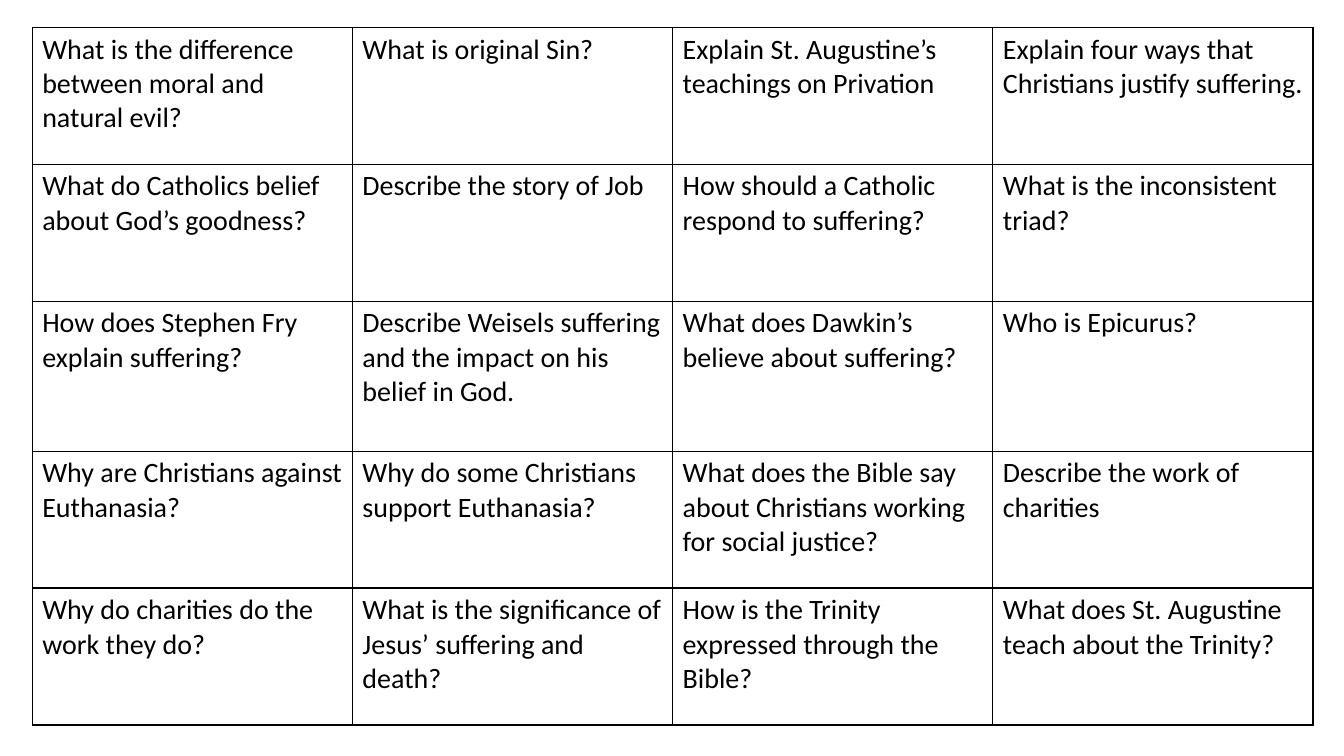
"""Build a slide with a four-by-five grid of revision questions."""
from lxml.etree import SubElement
from pptx import Presentation
from pptx.dml.color import RGBColor
from pptx.oxml.ns import qn
from pptx.util import Pt

COLORS = {"text": "000000", "border": "000000"}
FONT = "Calibri"
COLUMN_WIDTH = 228.75
ROW_HEIGHTS = [97.8, 97.8, 107.2, 97.8, 97.8]
BORDER_WIDTH = 1

QUESTIONS = [
    [
        "What is the difference between moral and natural evil?",
        "What is original Sin?",
        "Explain St. Augustine’s teachings on Privation",
        "Explain four ways that Christians justify suffering.",
    ],
    [
        "What do Catholics belief about God’s goodness?",
        "Describe the story of Job",
        "How should a Catholic respond to suffering?",
        "What is the inconsistent triad?",
    ],
    [
        "How does Stephen Fry explain suffering?",
        "Describe Weisels suffering and the impact on his belief in God.",
        "What does Dawkin’s believe about suffering?",
        "Who is Epicurus?",
    ],
    [
        "Why are Christians against Euthanasia?",
        "Why do some Christians support Euthanasia?",
        "What does the Bible say about Christians working for social justice?",
        "Describe the work of charities",
    ],
    [
        "Why do charities do the work they do?",
        "What is the significance of Jesus’ suffering and death?",
        "How is the Trinity expressed through the Bible?",
        "What does St. Augustine teach about the Trinity?",
    ],
]


def add_borders(cell):
    """Draw a solid line on all four sides of a cell."""
    properties = cell._tc.get_or_add_tcPr()
    for position, side in enumerate(("a:lnL", "a:lnR", "a:lnT", "a:lnB")):
        line = SubElement(properties, qn(side), w=str(Pt(BORDER_WIDTH)))
        fill = SubElement(line, qn("a:solidFill"))
        SubElement(fill, qn("a:srgbClr"), val=COLORS["border"])
        properties.insert(position, line)


presentation = Presentation()
presentation.slide_width = Pt(960)
presentation.slide_height = Pt(540)
slide = presentation.slides.add_slide(presentation.slide_layouts[6])

column_count = len(QUESTIONS[0])
table = slide.shapes.add_table(
    len(QUESTIONS), column_count, Pt(23), Pt(19.5),
    Pt(COLUMN_WIDTH * column_count), Pt(sum(ROW_HEIGHTS)),
).table
table.first_row = False
table.horz_banding = False

for column in table.columns:
    column.width = Pt(COLUMN_WIDTH)

for row, height, questions in zip(table.rows, ROW_HEIGHTS, QUESTIONS):
    row.height = Pt(height)
    for cell, question in zip(row.cells, questions):
        cell.fill.background()
        add_borders(cell)
        cell.text_frame.text = question
        font = cell.text_frame.paragraphs[0].runs[0].font
        font.name = FONT
        font.size = Pt(20)
        font.color.rgb = RGBColor.from_string(COLORS["text"])

presentation.save("out.pptx")
